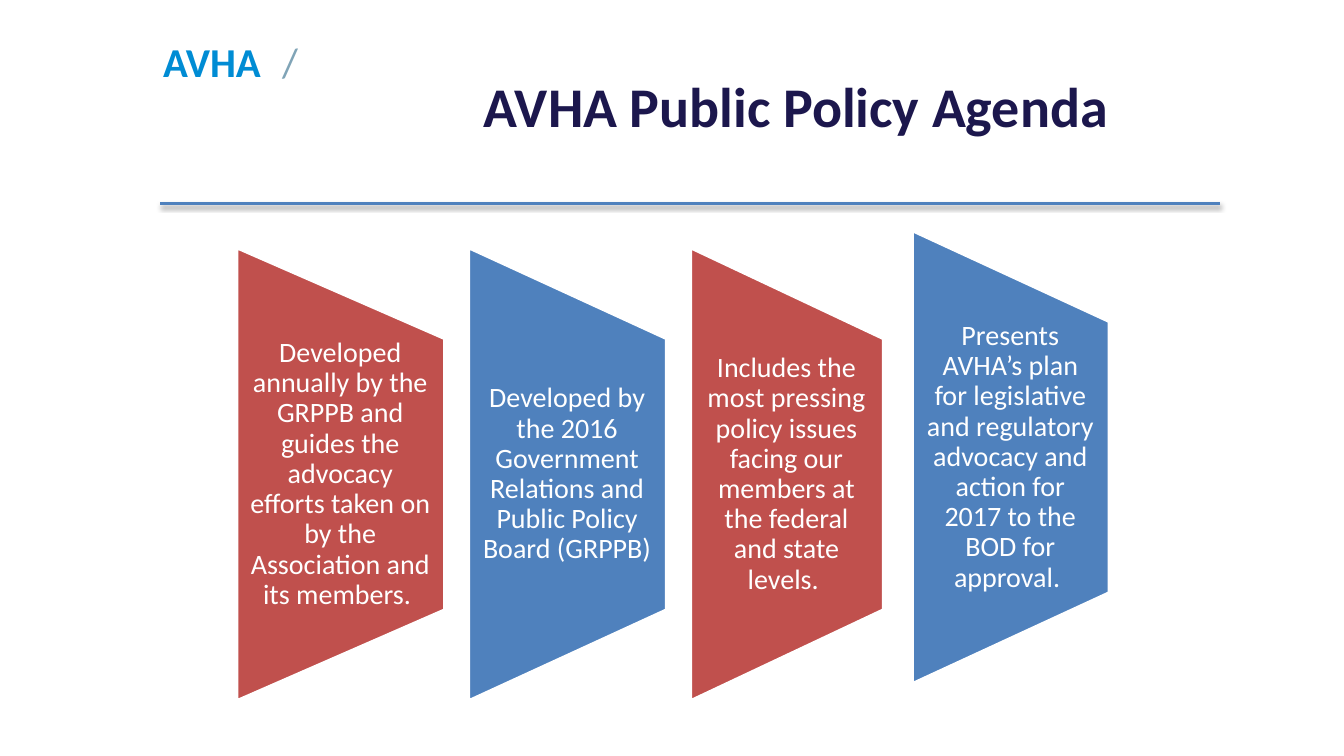
from lxml import etree
from pptx import Presentation
from pptx.dml.color import RGBColor
from pptx.enum import shapes, text
from pptx.oxml import ns
from pptx.util import Inches, Pt

COLORS = {
    "blue": "4F81BD",
    "red": "C0504D",
    "white": "FFFFFF",
    "navy": "1C174D",
    "brand": "008CD4",
    "slash": "80A4B7",
    "black": "000000",
}


def color(name):
    return RGBColor.from_string(COLORS[name])


def add_span(para, words, size, name, bold=False):
    span = para.add_run()
    span.text = words
    span.font.name = "Calibri"
    span.font.size = Pt(size)
    span.font.bold = bold
    span.font.color.rgb = color(name)


deck = Presentation()
deck.slide_width = Inches(13.33)
deck.slide_height = Inches(7.5)
page = deck.slides.add_slide(deck.slide_layouts[5])

header = [
    ("AVHA", 1.52, 1.46, 0.59, "brand", True),
    ("/", 2.7, 9.52, 0.67, "slash", False),
]
for words, left, width, height, name, bold in header:
    box = page.shapes.add_textbox(Inches(left), Inches(0.31), Inches(width), Inches(height))
    box.text_frame.word_wrap = True
    add_span(box.text_frame.paragraphs[0], words, 29.3, name, bold)

rule = page.shapes.add_connector(
    shapes.MSO_CONNECTOR.STRAIGHT, Inches(1.59), Inches(2.02), Inches(12.1), Inches(2.02)
)
rule.line.color.rgb = color("blue")
rule.line.width = Pt(2.5)
effects = etree.SubElement(rule._element.spPr, ns.qn("a:effectLst"))
shadow = etree.SubElement(
    effects, ns.qn("a:outerShdw"),
    blurRad=str(Pt(3.1)), dist=str(Pt(1.8)), dir="5400000", rotWithShape="0",
)
shade = etree.SubElement(shadow, ns.qn("a:srgbClr"), val=COLORS["black"])
etree.SubElement(shade, ns.qn("a:alpha"), val="35000")

panel_height, slant = 4.49, 0.9
panels = [
    (2.35, 2.46, 2.06, "red",
     "Developed annually by the GRPPB and guides the advocacy efforts taken on "
     "by the Association and its members. "),
    (4.65, 2.46, 1.96, "blue",
     "Developed by the 2016 Government Relations and Public Policy Board (GRPPB)"),
    (6.85, 2.46, 1.91, "red",
     "Includes the most pressing policy issues facing our members at the federal "
     "and state levels. "),
    (9.05, 2.29, 1.95, "blue",
     "Presents AVHA’s plan for legislative and regulatory advocacy and action "
     "for 2017 to the BOD for approval. "),
]
for left, top, width, name, words in panels:
    right, bottom = left + width, top + panel_height
    outline = page.shapes.build_freeform(Inches(left), Inches(bottom))
    corners = [(left, top), (right, top + slant), (right, bottom - slant)]
    outline.add_line_segments([(Inches(x), Inches(y)) for x, y in corners], close=True)
    panel = outline.convert_to_shape()
    panel.shadow.inherit = False
    panel.fill.solid()
    panel.fill.fore_color.rgb = color(name)
    panel.line.color.rgb = color("white")
    panel.line.width = Pt(2)
    frame = panel.text_frame
    frame.word_wrap = True
    frame.vertical_anchor = text.MSO_ANCHOR.MIDDLE
    frame.margin_left, frame.margin_right = Inches(0.12), Inches(0.13)
    frame.margin_top = frame.margin_bottom = Inches(0.79)
    para = frame.paragraphs[0]
    para.alignment = text.PP_ALIGN.CENTER
    para.line_spacing = 0.9
    add_span(para, words, 20, "white")

title = page.shapes.title
title.left, title.top = Inches(4.49), Inches(0.26)
title.width, title.height = Inches(6.81), Inches(1.65)
title.text_frame.word_wrap = True
title.text_frame.vertical_anchor = text.MSO_ANCHOR.MIDDLE
para = title.text_frame.paragraphs[0]
para.alignment = text.PP_ALIGN.CENTER
para.line_spacing = 0.9
add_span(para, "AVHA Public Policy Agenda", 40, "navy", True)

deck.save("out.pptx")
